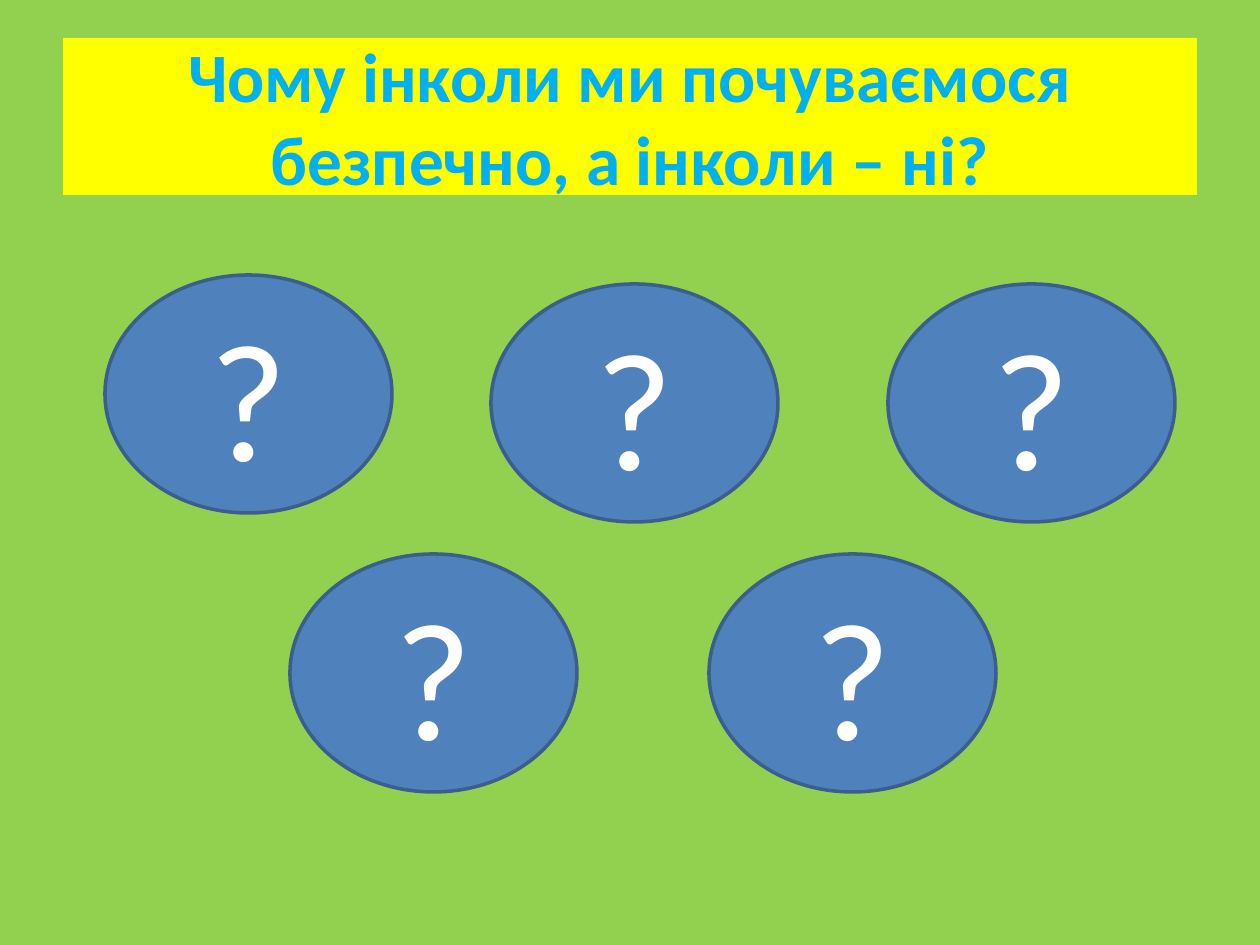
import pptx
import pptx.dml.color
import pptx.enum.shapes
import pptx.enum.text
import pptx.util

RGBColor = pptx.dml.color.RGBColor
GREEN = RGBColor(0x92, 0xD0, 0x50)
YELLOW = RGBColor(0xFF, 0xFF, 0x00)
SKY_BLUE = RGBColor(0x00, 0xB0, 0xF0)
BLUE = RGBColor(0x4F, 0x81, 0xBD)
DARK_BLUE = RGBColor(0x3A, 0x5F, 0x8C)
WHITE = RGBColor(0xFF, 0xFF, 0xFF)

FONT = "Calibri"
PX_PER_INCH = 126
OVAL_SIZE = (287, 238)
OVAL_POSITIONS = [(0, 0), (386, 9), (185, 279), (604, 279), (783, 9)]


def px(length):
    """Turn pixels into EMU."""
    return pptx.util.Emu(round(length * pptx.util.Inches(1) / PX_PER_INCH))


def write_text(shape, text, size, color, bold):
    """Write one centred paragraph in the middle of a shape."""
    frame = shape.text_frame
    frame.text = text
    frame.word_wrap = True
    frame.auto_size = pptx.enum.text.MSO_AUTO_SIZE.NONE
    frame.vertical_anchor = pptx.enum.text.MSO_ANCHOR.MIDDLE
    paragraph = frame.paragraphs[0]
    paragraph.alignment = pptx.enum.text.PP_ALIGN.CENTER
    paragraph.font.name = FONT
    paragraph.font.size = pptx.util.Pt(size)
    paragraph.font.bold = bold
    paragraph.font.color.rgb = color


def place_title(slide, left, top, width, height):
    """Place the title on its yellow band."""
    title = slide.shapes.title
    title.left, title.top = px(left), px(top)
    title.width, title.height = px(width), px(height)
    title.fill.solid()
    title.fill.fore_color.rgb = YELLOW
    write_text(title, "Чому інколи ми почуваємося безпечно, а інколи – ні?",
               39.6, SKY_BLUE, True)


def place_question_ovals(slide, left, top):
    """Place the question mark ovals relative to the corner of their region."""
    width, height = OVAL_SIZE
    for offset_x, offset_y in OVAL_POSITIONS:
        oval = slide.shapes.add_shape(
            pptx.enum.shapes.MSO_SHAPE.OVAL,
            px(left + offset_x), px(top + offset_y), px(width), px(height))
        oval.shadow.inherit = False
        oval.fill.solid()
        oval.fill.fore_color.rgb = BLUE
        oval.line.color.rgb = DARK_BLUE
        oval.line.width = pptx.util.Pt(2)
        write_text(oval, "?", 96, WHITE, False)


def main():
    """Build the slide and save it."""
    presentation = pptx.Presentation()
    presentation.slide_width = px(1260)
    presentation.slide_height = px(945)
    slide = presentation.slides.add_slide(presentation.slide_layouts[5])
    slide.background.fill.solid()
    slide.background.fill.fore_color.rgb = GREEN
    place_title(slide, 63, 38, 1134, 157)
    place_question_ovals(slide, 105, 275)
    presentation.save("out.pptx")


if __name__ == "__main__":
    main()
